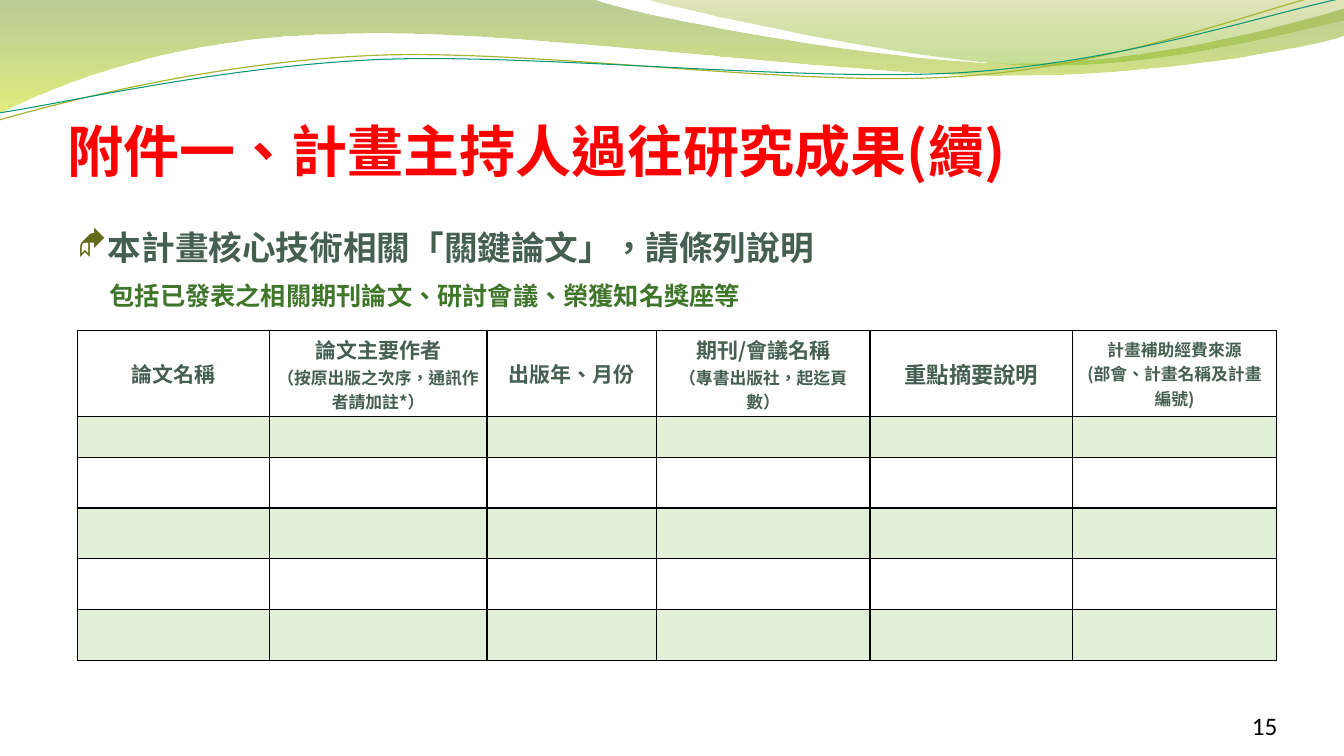
from lxml import etree
from pptx import Presentation
from pptx import util as u
from pptx.dml.color import RGBColor
from pptx.enum import text
from pptx.oxml import ns

THEME = {
    "cjk": "Noto Sans CJK TC", "latin": "Calibri", "symbols": "Wingdings",
    "title": "FF0000", "heading": "455F51", "note": "3F762A", "bullet": "626A19",
    "number": "000000", "border": "000000", "plain": "FFFFFF", "band": "E2F0D9",
    "title_size": 40, "heading_size": 24, "note_size": 18, "number_size": 18,
    "detail_size": 12,
}

# Each wave: starting point, then line ends (2 numbers) or cubic curves (6 numbers).
FILLED_WAVES = [
    {"start": (0, 0), "steps": [
        (5.87, -0.01), (6.34, 0.17, 8.84, 0.63, 10.11, 0.63),
        (11.37, 0.63, 12.77, 0.26, 13.33, 0.09), (13.34, 0.36),
        (13.11, 0.44, 11.59, 0.76, 9.94, 0.75), (8.29, 0.75, 5.09, 0.28, 3.43, 0.34),
        (1.72, 0.36, 0.61, 0.83, -0.02, 1.13)],
     "stops": [("668F1B", 45), ("CAE00E", 55)]},
    {"start": (6.38, -0.01), "steps": [
        (6.79, 0.11, 9.09, 0.62, 10.25, 0.65), (11.4, 0.69, 12.82, 0.32, 13.33, 0.21),
        (13.33, 0)],
     "stops": [("99A719", 30), ("80B814", 45)]},
]
LINE_WAVES = [
    {"start": (-0.01, 1.19), "steps": [
        (0.63, 1.01, 2.1, 0.62, 3.69, 0.55), (5.27, 0.48, 7.89, 0.87, 9.49, 0.76),
        (11.1, 0.66, 12.51, 0.08, 13.3, -0.1)], "color": "A8B532", "width": 0.85},
    {"start": (-0.01, 1.12), "steps": [
        (0.62, 1.03, 2.18, 0.66, 3.77, 0.59), (5.37, 0.53, 7.96, 0.82, 9.55, 0.72),
        (11.14, 0.62, 12.55, 0.14, 13.33, -0.02)], "color": "029676", "width": 0.75},
]
WAVE_UNITS = 100  # outline units per inch

TEXTS = [
    {"words": "附件一、計畫主持人過往研究成果(續)", "at": (0.67, 0.57, 12, 1.25),
     "insets": (0, 0.05, 0, 0), "anchor": "BOTTOM", "role": "title"},
    {"words": "本計畫核心技術相關「關鍵論文」，請條列說明", "at": (0.67, 2, 12.23, 0.75),
     "role": "heading", "spacing": 1.5, "bullet": "◆"},
    {"words": "15", "at": (11.56, 6.95, 1.11, 0.4), "insets": (0, 0, 0, 0),
     "anchor": "BOTTOM", "role": "number", "font": "latin", "bold": False,
     "align": "RIGHT"},
    {"words": "包括已發表之相關期刊論文、研討會議、榮獲知名獎座等",
     "at": (0.99, 2.58, 11.58, 0.56), "role": "note", "spacing": 1.5},
]

# Each column: width, then heading lines with their type size.
COLUMNS = [
    (1.9, [("論文名稱", 15)]),
    (2.16, [("論文主要作者", 15), ("（按原出版之次序，通訊作者請加註*）", 12)]),
    (1.68, [("出版年、月份", 15)]),
    (2.12, [("期刊/會議名稱", 15), ("（專書出版社，起迄頁數）", 12)]),
    (2.01, [("重點摘要說明", 16)]),
    (2.02, [("計畫補助經費來源", 12), ("(部會、計畫名稱及計畫編號)", 12)]),
]
ROW_HEIGHTS = [0.85, 0.41, 0.5, 0.5, 0.51, 0.5]
TABLE_LEFT, TABLE_TOP = 0.77, 3.28


def rgb(name):
    return RGBColor.from_string(THEME.get(name, name))


def inches(values):
    return [u.Inches(value) for value in values]


def set_values(target, values):
    for name, value in values.items():
        setattr(target, name, value)


def add_element(parent, tag, **attributes):
    return etree.SubElement(parent, ns.qn(tag), attributes)


def add_wave(page, wave, close):
    """Draw straight segments through the knots, then bend those that are curves."""
    knots = [[round(value * WAVE_UNITS) for value in step[-2:]]
             for step in [wave["start"], *wave["steps"]]]
    builder = page.shapes.build_freeform(*knots[0], scale=u.Inches(1) / WAVE_UNITS)
    builder.add_line_segments(knots[1:], close=close)
    shape = builder.convert_to_shape()
    shape.shadow.inherit = False
    left, top = (min(axis) for axis in zip(*knots))
    for segment, step in zip(shape.element.xpath(".//a:lnTo"), wave["steps"]):
        if len(step) == 6:
            segment.clear()
            segment.tag = ns.qn("a:cubicBezTo")
            for x, y in zip(step[::2], step[1::2]):
                add_element(segment, "a:pt", x=str(round(x * WAVE_UNITS) - left),
                            y=str(round(y * WAVE_UNITS) - top))
    return shape


def add_filled_wave(page, wave):
    shape = add_wave(page, wave, close=True)
    shape.line.fill.background()
    shape.fill.gradient()
    shape.fill.gradient_angle = 270
    for place, (stop, (color, _)) in enumerate(zip(shape.fill.gradient_stops, wave["stops"])):
        stop.position = place
        stop.color.rgb = rgb(color)
    for node, (_, opacity) in zip(shape.element.xpath(".//a:gs/a:srgbClr"), wave["stops"]):
        add_element(node, "a:alpha", val=str(opacity * 1000))


def add_line_wave(page, wave):
    shape = add_wave(page, wave, close=False)
    shape.fill.background()
    shape.line.color.rgb = rgb(wave["color"])
    shape.line.width = u.Pt(wave["width"])


def add_span(para, words, size, color, font="cjk", bold=True):
    span = para.add_run()
    span.text = words
    set_values(span.font, {"size": u.Pt(size), "bold": bold, "name": THEME[font]})
    span.font.color.rgb = rgb(color)
    props = span.font._element
    props.set("lang", "zh-TW")
    add_element(props, "a:ea", typeface=THEME[font])


def add_bullet(para, symbol):
    props = para._p.get_or_add_pPr()
    props.set("marL", str(u.Inches(0.3)))
    props.set("indent", str(u.Inches(-0.3)))
    add_element(add_element(props, "a:buClr"), "a:srgbClr", val=THEME["bullet"])
    add_element(props, "a:buFont", typeface=THEME["symbols"], charset="2")
    add_element(props, "a:buChar", char=symbol)


def add_text(page, item):
    box = page.shapes.add_textbox(*inches(item["at"]))
    frame = box.text_frame
    left, top, right, bottom = inches(item.get("insets", (0.1, 0.05, 0.1, 0.05)))
    set_values(frame, {
        "word_wrap": True, "margin_left": left, "margin_top": top, "margin_right": right,
        "margin_bottom": bottom,
        "vertical_anchor": getattr(text.MSO_ANCHOR, item.get("anchor", "TOP"))})
    para = frame.paragraphs[0]
    set_values(para, {"alignment": getattr(text.PP_ALIGN, item.get("align", "LEFT")),
                      "line_spacing": item.get("spacing", 1.0)})
    if "bullet" in item:
        add_bullet(para, item["bullet"])
    role = item["role"]
    add_span(para, item["words"], THEME[role + "_size"], role, item.get("font", "cjk"),
             item.get("bold", True))


def format_cell(cell, color):
    set_values(cell, {
        "margin_left": u.Inches(0.07), "margin_right": u.Inches(0.07),
        "margin_top": u.Inches(0.04), "margin_bottom": u.Inches(0.04),
        "vertical_anchor": text.MSO_ANCHOR.MIDDLE})
    cell.fill.solid()
    cell.fill.fore_color.rgb = rgb(color)
    props = cell._tc.get_or_add_tcPr()
    for place, side in enumerate(("a:lnL", "a:lnR", "a:lnT", "a:lnB")):
        border = add_element(props, side, w=str(u.Pt(1)))
        add_element(add_element(border, "a:solidFill"), "a:srgbClr", val=THEME["border"])
        props.insert(place, border)


def add_paper_table(page):
    widths = [width for width, _ in COLUMNS]
    size = inches((TABLE_LEFT, TABLE_TOP, sum(widths), sum(ROW_HEIGHTS)))
    table = page.shapes.add_table(len(ROW_HEIGHTS), len(COLUMNS), *size).table
    for column, width in zip(table.columns, widths):
        column.width = u.Inches(width)
    for index, (row, height) in enumerate(zip(table.rows, ROW_HEIGHTS)):
        row.height = u.Inches(height)
        for cell, (_, lines) in zip(row.cells, COLUMNS):
            format_cell(cell, "band" if index % 2 else "plain")
            frame = cell.text_frame
            if index:
                frame.paragraphs[0].font.size = u.Pt(THEME["detail_size"])
                continue
            for number, (words, points) in enumerate(lines):
                para = frame.add_paragraph() if number else frame.paragraphs[0]
                para.alignment = text.PP_ALIGN.CENTER
                add_span(para, words, points, "heading")


def main():
    deck = Presentation()
    set_values(deck, {"slide_width": u.Inches(13.33), "slide_height": u.Inches(7.5)})
    page = deck.slides.add_slide(deck.slide_layouts[6])
    for wave in FILLED_WAVES:
        add_filled_wave(page, wave)
    for wave in LINE_WAVES:
        add_line_wave(page, wave)
    for item in TEXTS:
        add_text(page, item)
    add_paper_table(page)
    deck.save("out.pptx")


if __name__ == "__main__":
    main()
